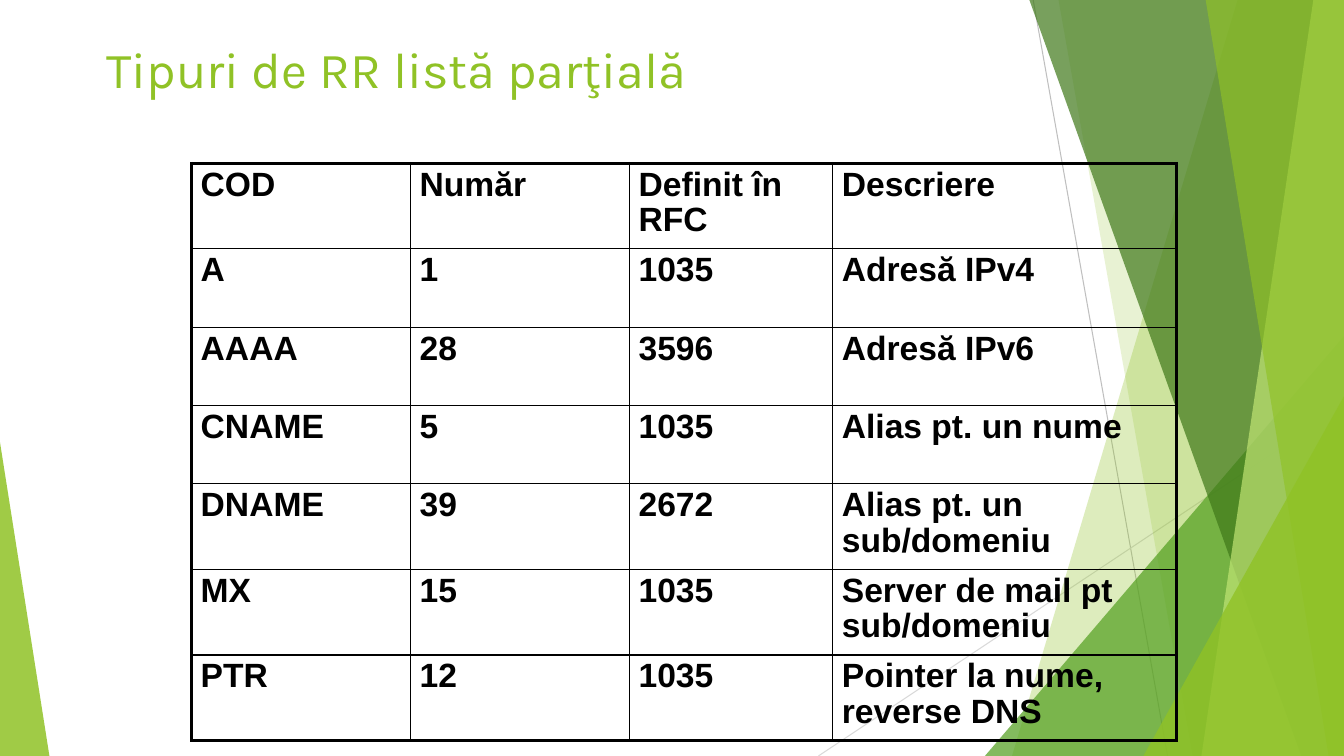
import pptx
import pptx.dml.color
import pptx.enum.shapes
import pptx.enum.text
import pptx.oxml.ns
import pptx.util
from lxml import etree

Pt = pptx.util.Pt
WIDTH, HEIGHT = 960, 540

TITLE = "Tipuri de RR listă parţială"
RECORD_TYPES = [
    ("COD", "Număr", "Definit în RFC", "Descriere"),
    ("A", "1", "1035", "Adresă IPv4"),
    ("AAAA", "28", "3596", "Adresă IPv6"),
    ("CNAME", "5", "1035", "Alias pt. un nume"),
    ("DNAME", "39", "2672", "Alias pt. un sub/domeniu"),
    ("MX", "15", "1035", "Server de mail pt sub/domeniu"),
    ("PTR", "12", "1035", "Pointer la nume, reverse DNS"),
]
TABLE_LEFT, TABLE_TOP, ROW_HEIGHT = 136.8, 116.6, 56
COLUMN_WIDTHS = [156.4, 156.4, 145.2, 245.4]
THIN, THICK = 1, 2.25

# start, end, colour
RAYS = [
    ((738, 0), (834, HEIGHT), "BFBFBF"),
    ((WIDTH, 290), (584.6, HEIGHT), "D9D9D9"),
]
# Bands reach the right edge: (top x, bottom x).
# Triangles stand on the bottom edge: (left, top, width, apex position).
FACETS = [
    ("band", (884.2, 722.9), "90C226", 30),
    ("band", (756, 851.8), "90C226", 20),
    ("triangle", (703.5, 240, 256.5, 1), "54A021", 72),
    ("band", (735.1, 929.5), "3F7819", 70),
    ("band", (938.2, 858.2), "C0E474", 70),
    ("band", (861.1, 949), "90C226", 65),
    ("triangle", (816.7, 283, 143.3, 1), "90C226", 80),
    ("triangle", (0, 316, 35.3, 0), "90C226", 85),
]


def rgb(hex_colour):
    return pptx.dml.color.RGBColor.from_string(hex_colour)


def add_ray(shapes, start, end, colour):
    ray = shapes.add_connector(
        pptx.enum.shapes.MSO_CONNECTOR.STRAIGHT, *map(Pt, start + end))
    ray.line.color.rgb = rgb(colour)
    ray.line.width = Pt(0.75)
    etree.SubElement(ray._element.spPr, pptx.oxml.ns.qn("a:effectLst"))


def add_facet(shapes, kind, geometry, colour, opacity):
    if kind == "band":
        top_x, bottom_x = geometry
        builder = shapes.build_freeform(Pt(top_x), Pt(-0.6))
        corners = [(WIDTH, -0.6), (WIDTH, HEIGHT), (bottom_x, HEIGHT)]
        builder.add_line_segments([(Pt(x), Pt(y)) for x, y in corners])
        facet = builder.convert_to_shape()
    else:
        left, top, width, apex = geometry
        facet = shapes.add_shape(
            pptx.enum.shapes.MSO_SHAPE.ISOSCELES_TRIANGLE,
            Pt(left), Pt(top), Pt(width), Pt(HEIGHT - top))
        facet.adjustments[0] = apex
    facet.shadow.inherit = False
    facet.line.fill.background()
    facet.fill.solid()
    facet.fill.fore_color.rgb = rgb(colour)
    solid = facet._element.spPr.find(pptx.oxml.ns.qn("a:solidFill"))
    etree.SubElement(solid[0], pptx.oxml.ns.qn("a:alpha"), val=str(opacity * 1000))


def format_text(paragraph, font_name, size, colour, bold=False):
    for run in paragraph.runs:
        run.font.name = font_name
        run.font.size = Pt(size)
        run.font.bold = bold
        run.font.color.rgb = rgb(colour)


def add_title(shapes):
    heading = shapes.add_textbox(Pt(69), Pt(23.8), Pt(834.5), Pt(66)).text_frame
    heading.word_wrap = True
    heading.vertical_anchor = pptx.enum.text.MSO_ANCHOR.TOP
    heading.text = TITLE
    format_text(heading.paragraphs[0], "Karla", 36, "90C226")


def set_borders(cell, widths):
    properties = cell._tc.get_or_add_tcPr()
    for side, width in widths.items():
        border = etree.SubElement(
            properties, pptx.oxml.ns.qn("a:ln" + side), w=str(Pt(width)))
        solid = etree.SubElement(border, pptx.oxml.ns.qn("a:solidFill"))
        etree.SubElement(solid, pptx.oxml.ns.qn("a:srgbClr"), val="000000")


def add_record_table(shapes):
    last_row, last_column = len(RECORD_TYPES) - 1, len(COLUMN_WIDTHS) - 1
    records = shapes.add_table(
        last_row + 1, last_column + 1, Pt(TABLE_LEFT), Pt(TABLE_TOP),
        Pt(sum(COLUMN_WIDTHS)), Pt(ROW_HEIGHT * len(RECORD_TYPES))).table
    records.first_row = records.horz_banding = False
    for column, width in zip(records.columns, COLUMN_WIDTHS):
        column.width = Pt(width)
    for r, record in enumerate(RECORD_TYPES):
        records.rows[r].height = Pt(ROW_HEIGHT)
        for c, entry in enumerate(record):
            cell = records.cell(r, c)
            cell.margin_left = cell.margin_right = Pt(6.6)
            cell.margin_top = cell.margin_bottom = Pt(3.2)
            cell.text_frame.text = entry
            paragraph = cell.text_frame.paragraphs[0]
            paragraph.line_spacing = 0.95
            format_text(paragraph, "Arial", 24, "000000", bold=True)
            set_borders(cell, {
                "L": THICK if c == 0 else THIN,
                "R": THICK if c == last_column else THIN,
                "T": THICK if r == 0 else THIN,
                "B": THICK if r == last_row else THIN,
            })
            cell.fill.background()


def main():
    deck = pptx.Presentation()
    deck.slide_width, deck.slide_height = Pt(WIDTH), Pt(HEIGHT)
    shapes = deck.slides.add_slide(deck.slide_layouts[6]).shapes
    for ray in RAYS:
        add_ray(shapes, *ray)
    for facet in FACETS:
        add_facet(shapes, *facet)
    add_title(shapes)
    add_record_table(shapes)
    deck.save("out.pptx")


if __name__ == "__main__":
    main()
